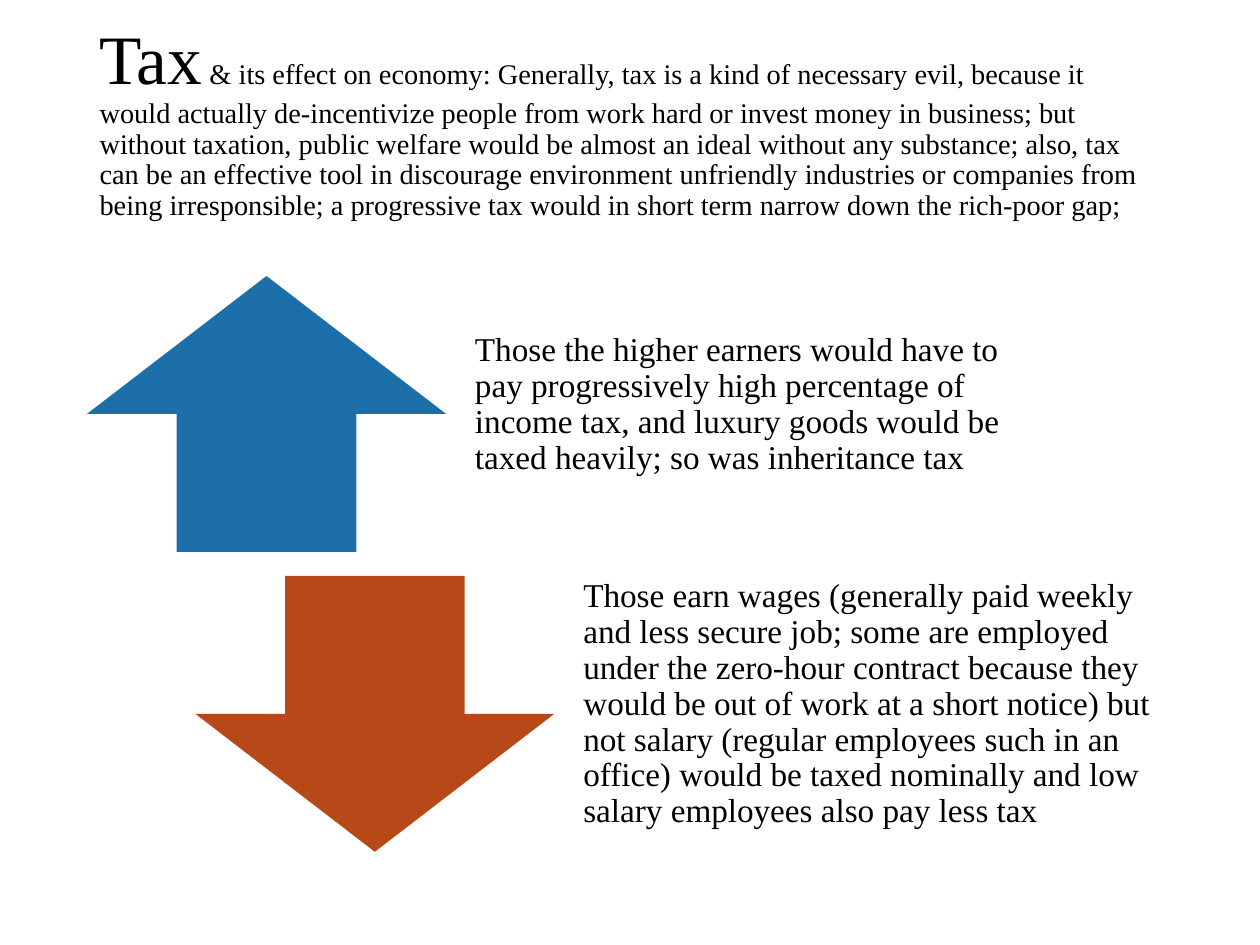
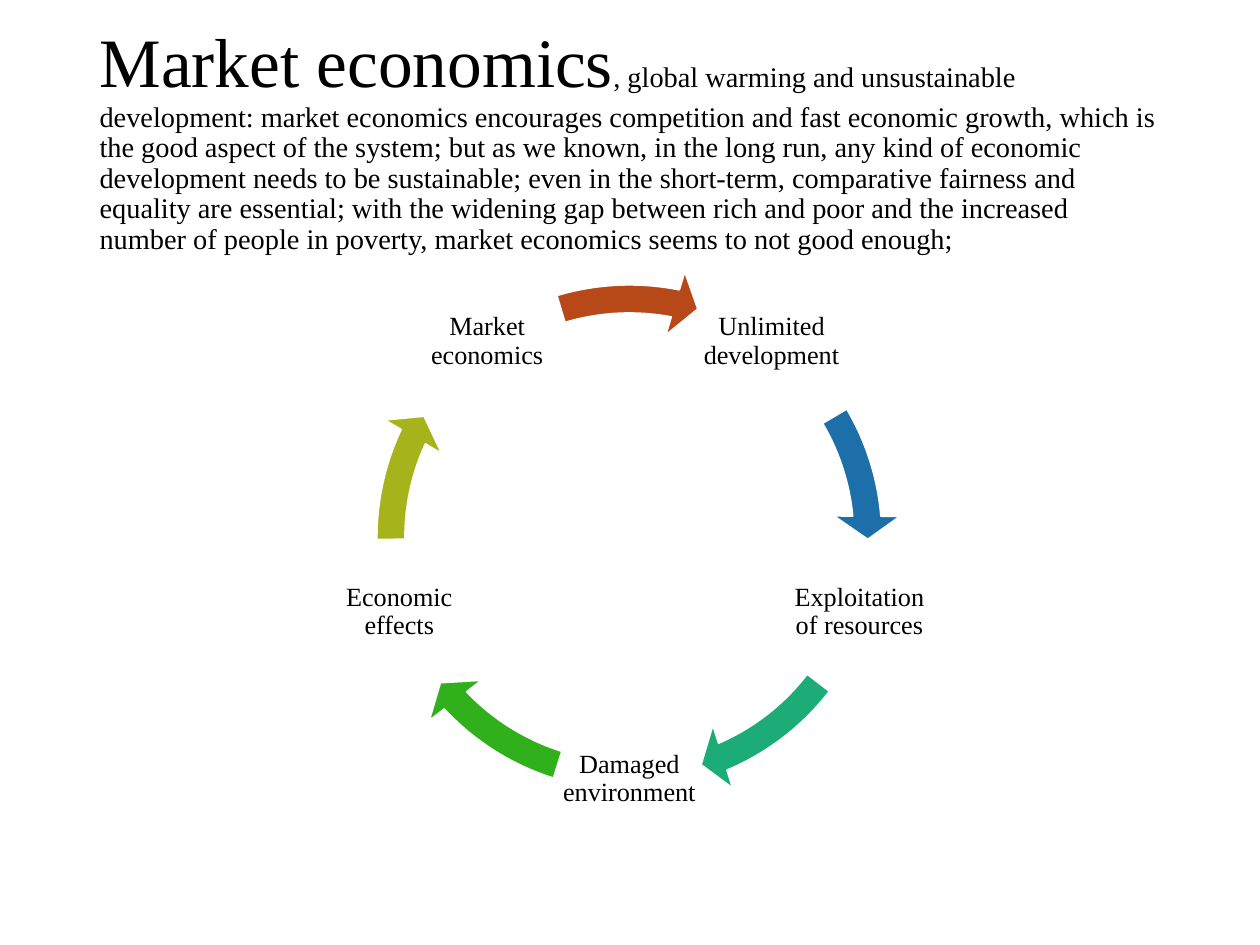
from math import cos, radians, sin

from pptx import Presentation
from pptx.dml.color import RGBColor
from pptx.enum import shapes, text
from pptx.oxml import ns
from pptx.util import Inches, Pt
from lxml import etree

COLORS = {
    "ink": "000000",
    "paper": "FFFFFF",
    "blue": "1D6FA9",
    "rust": "B74919",
    "teal": "1CAC78",
    "green": "30B01B",
    "olive": "A7B31A",
}
FONT = "Times New Roman"
TITLE_BOX = (0.69, 0.4, 8.62, 1.45)
LEAD_SIZE, DETAIL_SIZE = 39.6, 16.2


def color(name):
    return RGBColor.from_string(COLORS[name])


def write(frame, *runs, align=text.PP_ALIGN.LEFT, insets=(0.1, 0.05, 0.1, 0.05)):
    frame.word_wrap = True
    frame.auto_size = text.MSO_AUTO_SIZE.NONE
    frame.vertical_anchor = text.MSO_ANCHOR.MIDDLE
    frame.margin_left, frame.margin_top, frame.margin_right, frame.margin_bottom = map(Inches, insets)
    paragraph = frame.paragraphs[0]
    paragraph.alignment = align
    paragraph.line_spacing = 0.9
    for words, size in runs:
        run = paragraph.add_run()
        run.text = words
        run.font.name = FONT
        run.font.size = Pt(size)
        run.font.color.rgb = color("ink")
    return paragraph


def add_label(slide, box, words, size, **layout):
    label = slide.shapes.add_textbox(*map(Inches, box))
    write(label.text_frame, (words, size), **layout)


def add_arrow(slide, preset, box, fill, outline=None):
    arrow = slide.shapes.add_shape(preset, *map(Inches, box))
    arrow.shadow.inherit = False
    arrow.fill.solid()
    arrow.fill.fore_color.rgb = color(fill)
    if outline:
        arrow.line.color.rgb = color(outline)
        arrow.line.width = Pt(1)
    else:
        arrow.line.fill.background()
    return arrow


def add_titled_slide(deck, lead, detail, closing_break=False):
    slide = deck.slides.add_slide(deck.slide_layouts[5])
    title = slide.shapes.title
    title.left, title.top, title.width, title.height = map(Inches, TITLE_BOX)
    paragraph = write(title.text_frame, (lead, LEAD_SIZE), (detail, DETAIL_SIZE))
    if closing_break:
        paragraph.add_line_break()
        etree.SubElement(paragraph._p, ns.qn("a:endParaRPr"), sz="1800")
    return slide


def add_opposing_arrows(slide, box, effects):
    left, top, width, height = box
    arrow_width, arrow_height, gap = 2.85, 2.19, 0.08
    text_width = 4.83
    step_x = width - arrow_width - gap - text_width
    step_y = height - arrow_height
    for index, (preset, fill, words) in enumerate(effects):
        x, y = left + index * step_x, top + index * step_y
        add_arrow(slide, preset, (x, y, arrow_width, arrow_height), fill)
        add_label(slide, (x + arrow_width + gap, y, text_width, arrow_height),
                  words, 19, insets=(0.15, 0, 0.15, 0.15))


def add_cycle(slide, box, stages):
    left, top, side = box
    center_x, center_y = left + side / 2, top + side / 2
    radius, label_side = 1.92, 1.15
    step = 360 / len(stages)
    for index, (words, fill, start, end) in enumerate(stages):
        angle = radians(-90 + step / 2 + index * step)
        x = center_x + radius * cos(angle) - label_side / 2
        y = center_y + radius * sin(angle) - label_side / 2
        add_label(slide, (x, y, label_side, label_side), words, 15,
                  align=text.PP_ALIGN.CENTER, insets=(0.02,) * 4)
        arrow = add_arrow(slide, shapes.MSO_SHAPE.CIRCULAR_ARROW,
                          (left, top, side, side), fill, outline="paper")
        head_degrees = 5.6
        settings = (0.052, head_degrees * 0.6, end * 0.6, start * 0.6, 0.061)
        for position, value in enumerate(settings):
            arrow.adjustments[position] = value


def build_tax(deck):
    slide = add_titled_slide(
        deck, "Tax",
        " & its effect on economy: Generally, tax is a kind of necessary evil, because it would "
        "actually de-incentivize people from work hard or invest money in business; but without "
        "taxation, public welfare would be almost an ideal without any substance; also, tax can be "
        "an effective tool in discourage environment unfriendly industries or companies from being "
        "irresponsible; a progressive tax would in short term narrow down the rich-poor gap;",
        closing_break=True)
    add_opposing_arrows(slide, (0.69, 2.19, 8.62, 4.57), [
        (shapes.MSO_SHAPE.UP_ARROW, "blue",
         "Those the higher earners would have to pay progressively high percentage of income tax, "
         "and luxury goods would be taxed heavily; so was inheritance tax"),
        (shapes.MSO_SHAPE.DOWN_ARROW, "rust",
         "Those earn wages (generally paid weekly and less secure job; some are employed under the "
         "zero-hour contract because they would be out of work at a short notice) but not salary "
         "(regular employees such in an office) would be taxed nominally and low salary employees "
         "also pay less tax"),
    ])


def build_market(deck):
    slide = add_titled_slide(
        deck, "Market economics",
        ", global warming and unsustainable development: market economics encourages competition "
        "and fast economic growth, which is the good aspect of the system; but as we known, in the "
        "long run, any kind of economic development needs to be sustainable; even in the short-term, "
        "comparative fairness and equality are essential; with the widening gap between rich and "
        "poor and the increased number of people in poverty, market economics seems to not good enough;")
    add_cycle(slide, (2.84, 2.11, 4.31), [
        ("Unlimited development", "blue", 329.44, 354.89),
        ("Exploitation of resources", "teal", 37.56, 66.91),
        ("Damaged environment", "green", 107.49, 136.84),
        ("Economic effects", "olive", 179.51, 204.96),
        ("Market economics", "rust", 253.31, 281.1),
    ])


def main():
    deck = Presentation()
    deck.slide_width, deck.slide_height = Inches(10), Inches(7.5)
    build_tax(deck)
    build_market(deck)
    deck.save("out.pptx")


if __name__ == "__main__":
    main()
